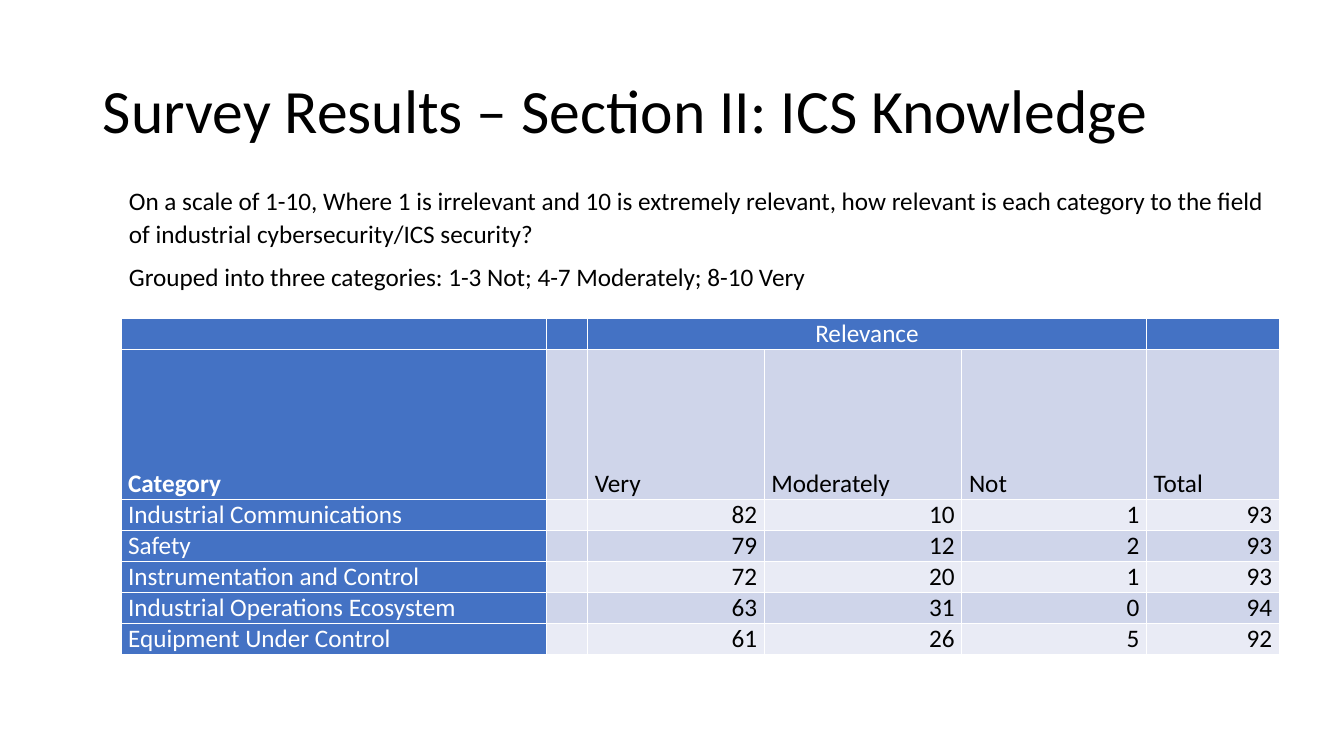
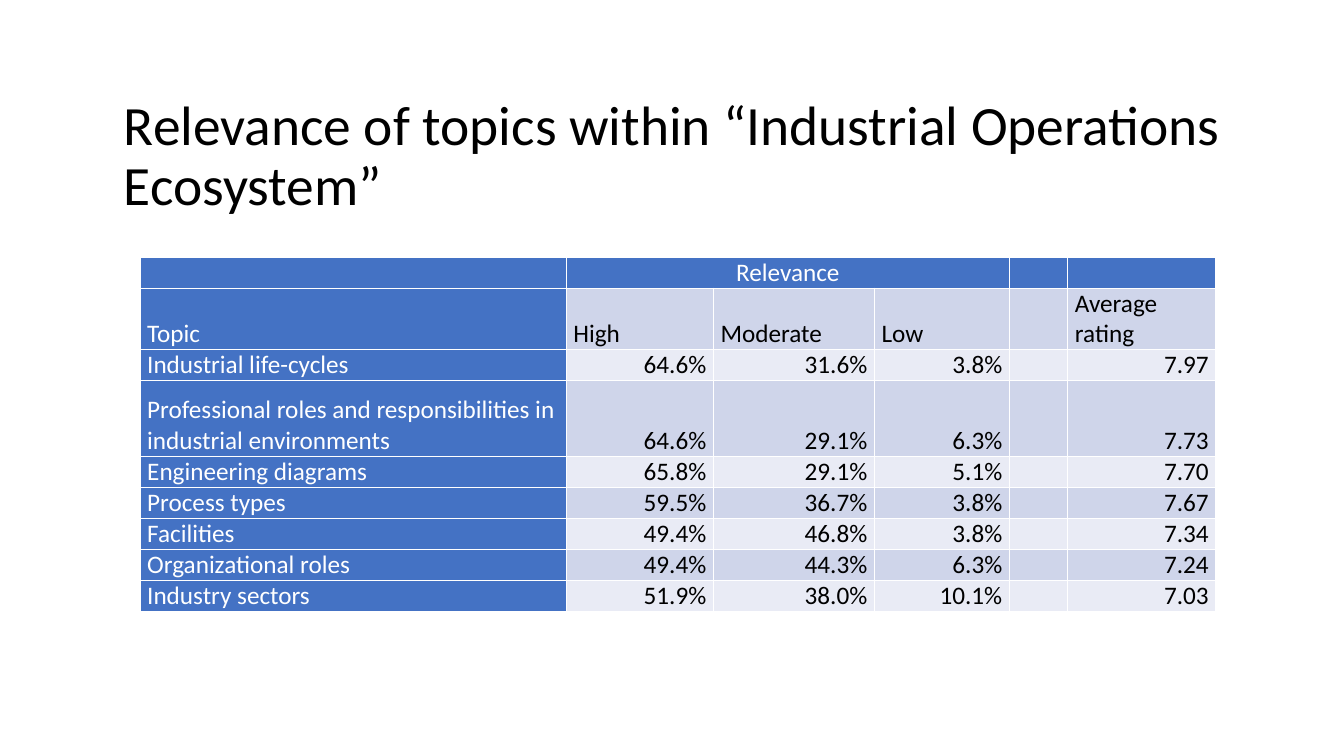
from lxml.etree import SubElement
from pptx import Presentation
from pptx.dml.color import RGBColor
from pptx.enum.text import MSO_ANCHOR, MSO_AUTO_SIZE, PP_ALIGN
from pptx.oxml.ns import qn
from pptx.util import Cm, Pt

COLORS = {
    "text": "000000",
    "inverse": "FFFFFF",
    "border": "FFFFFF",
    "header": "4472C4",
    "band_dark": "CFD5EA",
    "band_light": "E9EBF5",
}
FONT = "Calibri"
BODY_SIZE = 18
ROW_HEIGHT = 0.78

TITLE_FRAME = {
    "word_wrap": True,
    "auto_size": MSO_AUTO_SIZE.NONE,
    "vertical_anchor": MSO_ANCHOR.MIDDLE,
}
TITLE_PARAGRAPH = {"alignment": PP_ALIGN.LEFT, "line_spacing": 0.9}
QUESTION_PARAGRAPH = {"line_spacing": 1.07, "space_after": Pt(8)}
CELL_FORMAT = {
    "margin_left": Cm(0.18),
    "margin_right": Cm(0.18),
    "margin_top": 0,
    "margin_bottom": 0,
    "vertical_anchor": MSO_ANCHOR.BOTTOM,
}

QUESTION = [
    "On a scale of 1-10, Where 1 is irrelevant and 10 is extremely relevant, "
    "how relevant is each category to the field of industrial cybersecurity/ICS security?",
    "Grouped into three categories: 1-3 Not; 4-7 Moderately; 8-10 Very",
]
CATEGORY_ROWS = [
    ["", "", "Relevance", "", "", ""],
    ["Category", "", "Very", "Moderately", "Not", "Total"],
    ["Industrial Communications", "", "82", "10", "1", "93"],
    ["Safety", "", "79", "12", "2", "93"],
    ["Instrumentation and Control", "", "72", "20", "1", "93"],
    ["Industrial Operations Ecosystem", "", "63", "31", "0", "94"],
    ["Equipment Under Control", "", "61", "26", "5", "92"],
]
TOPIC_ROWS = [
    ["", "Relevance", "", "", "", ""],
    ["Topic", "High", "Moderate", "Low", "", "Average rating"],
    ["Industrial life-cycles", "64.6%", "31.6%", "3.8%", "", "7.97"],
    ["Professional roles and responsibilities in industrial environments",
     "64.6%", "29.1%", "6.3%", "", "7.73"],
    ["Engineering diagrams", "65.8%", "29.1%", "5.1%", "", "7.70"],
    ["Process types", "59.5%", "36.7%", "3.8%", "", "7.67"],
    ["Facilities", "49.4%", "46.8%", "3.8%", "", "7.34"],
    ["Organizational roles", "49.4%", "44.3%", "6.3%", "", "7.24"],
    ["Industry sectors", "51.9%", "38.0%", "10.1%", "", "7.03"],
]


def apply_format(target, values):
    for attribute, value in values.items():
        setattr(target, attribute, value)


def style_font(font, size=BODY_SIZE, color="text", bold=False):
    apply_format(font, {"name": FONT, "size": Pt(size), "bold": bold})
    font.color.rgb = RGBColor.from_string(COLORS[color])


def add_title(slide, text, box, size):
    title = slide.shapes.title
    apply_format(title, dict(zip(("left", "top", "width", "height"), map(Cm, box))))
    apply_format(title.text_frame, TITLE_FRAME)
    title.text_frame.text = text
    heading = title.text_frame.paragraphs[0]
    apply_format(heading, TITLE_PARAGRAPH)
    style_font(heading.runs[0].font, size)


def add_question(slide, lines, box):
    frame = slide.shapes.add_textbox(*map(Cm, box)).text_frame
    frame.word_wrap = True
    frame.text = "\n".join(lines)
    for paragraph in frame.paragraphs:
        apply_format(paragraph, QUESTION_PARAGRAPH)
        style_font(paragraph.runs[0].font)


def add_borders(cell, width=1):
    properties = cell._tc.get_or_add_tcPr()
    for side in ("a:lnL", "a:lnR", "a:lnT", "a:lnB"):
        line = SubElement(properties, qn(side), w=str(Pt(width)))
        fill = SubElement(line, qn("a:solidFill"))
        SubElement(fill, qn("a:srgbClr"), val=COLORS["border"])


def style_cell(cell, text, row, column, bold):
    is_header = row == 0 or column == 0
    apply_format(cell, CELL_FORMAT)
    add_borders(cell)
    band = "header" if is_header else "band_dark" if row % 2 else "band_light"
    cell.fill.solid()
    cell.fill.fore_color.rgb = RGBColor.from_string(COLORS[band])

    cell.text = text
    paragraph = cell.text_frame.paragraphs[0]
    if row == 0:
        paragraph.alignment = PP_ALIGN.CENTER
    elif row > 1 and column > 0:
        paragraph.alignment = PP_ALIGN.RIGHT
    else:
        paragraph.alignment = PP_ALIGN.LEFT
    style_font(paragraph.font, color="inverse" if is_header else "text", bold=bold)
    for run in paragraph.runs:
        style_font(run.font, color="inverse" if is_header else "text", bold=bold)


def add_relevance_table(slide, rows, origin, widths, tall_rows, bold_label=""):
    """Place the table at origin; tall_rows maps a row to its own height."""
    heights = [tall_rows.get(index, ROW_HEIGHT) for index in range(len(rows))]
    box = (*origin, sum(widths), sum(heights))
    table = slide.shapes.add_table(len(rows), len(widths), *map(Cm, box)).table
    table.horz_banding = False
    for column, width in zip(table.columns, widths):
        column.width = Cm(width)
    for table_row, height in zip(table.rows, heights):
        table_row.height = Cm(height)
    for row, texts in enumerate(rows):
        for column, text in enumerate(texts):
            bold = bool(text) and text == bold_label
            style_cell(table.cell(row, column), text, row, column, bold)

    # Group heading over the three relevance columns
    first = rows[0].index("Relevance")
    table.cell(0, first).merge(table.cell(0, first + 2))


def build_survey_slide(slide):
    add_title(slide, "Survey Results – Section II: ICS Knowledge",
              (2.34, 1.02, 29.21, 3.68), 44)
    add_relevance_table(slide, CATEGORY_ROWS, (3.05, 8.03),
                        (10.72, 1.04, 4.45, 4.98, 4.65, 3.35), {1: 3.78}, "Category")
    add_question(slide, QUESTION, (3, 4.5, 29.46, 2.97))


def build_topics_slide(slide):
    add_title(slide, "Relevance of topics within “Industrial Operations Ecosystem”",
              (2.87, 2.84, 31, 2.26), 39.6)
    add_relevance_table(slide, TOPIC_ROWS, (3.53, 6.48),
                        (10.74, 3.71, 4.06, 3.4, 1.47, 3.73), {1: 1.55, 3: 1.91})


def main():
    deck = Presentation()
    deck.slide_width, deck.slide_height = Cm(33.87), Cm(19.05)
    title_only = deck.slide_layouts[5]
    for build in (build_survey_slide, build_topics_slide):
        build(deck.slides.add_slide(title_only))
    deck.save("out.pptx")


if __name__ == "__main__":
    main()
